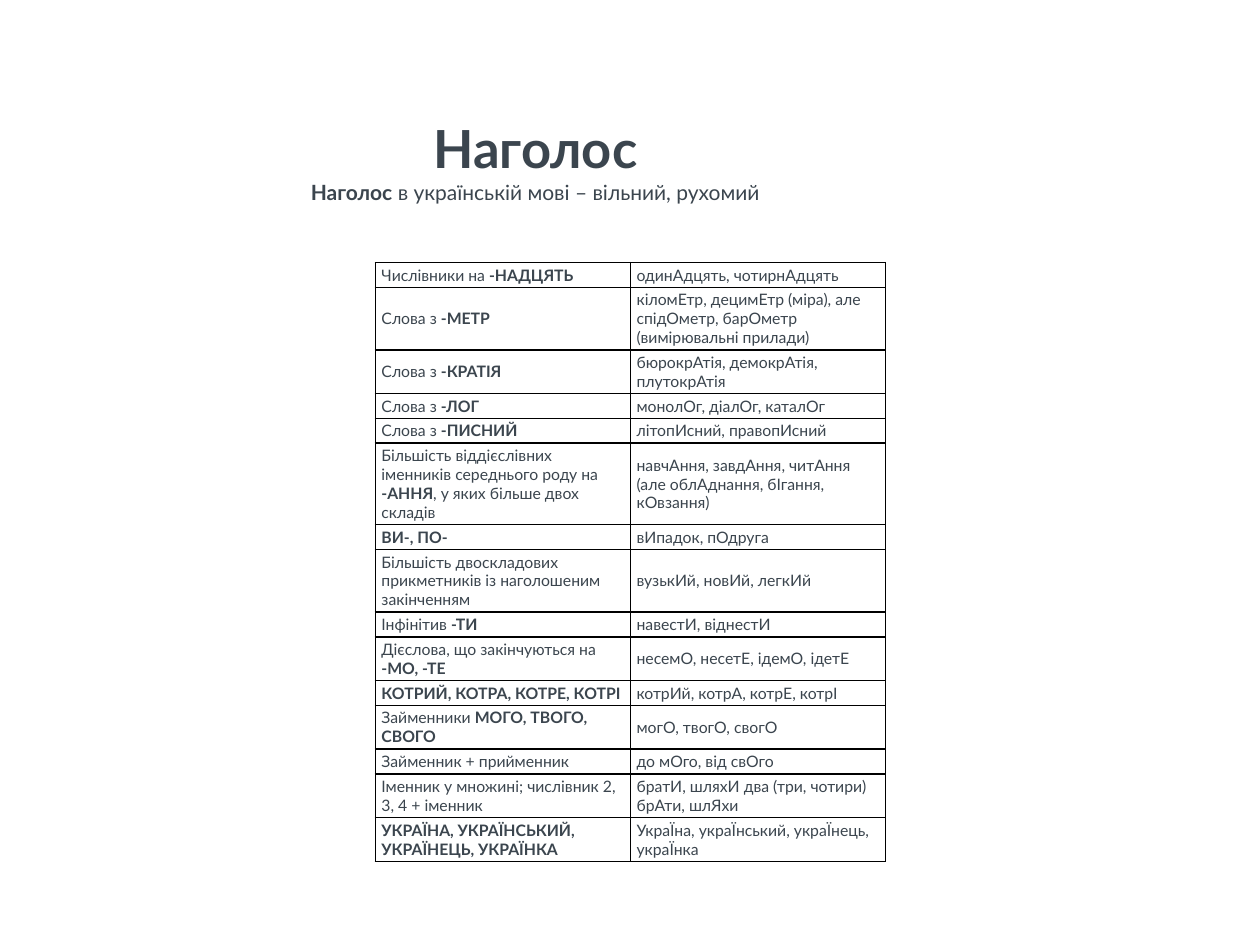
from lxml import etree
from pptx import Presentation
from pptx.dml.color import RGBColor
from pptx.enum.shapes import MSO_SHAPE
from pptx.enum.text import MSO_ANCHOR, PP_ALIGN
from pptx.oxml.ns import qn
from pptx.util import Pt

RECTANGLE = MSO_SHAPE.RECTANGLE
TOP, MIDDLE = MSO_ANCHOR.TOP, MSO_ANCHOR.MIDDLE
CENTER = PP_ALIGN.CENTER

INK = RGBColor(0x3B, 0x45, 0x4E)
WHITE = RGBColor(0xFF, 0xFF, 0xFF)
BLACK = RGBColor(0x00, 0x00, 0x00)
FONT = "Lato"
LINE_HEIGHT = 10.8
SIDE_INSET, EDGE_INSET = 3.5, 1.7

RULES = [
    ("Числівники на *-НАДЦЯТЬ*", "одинАдцять, чотирнАдцять", 1),
    ("Слова з *-МЕТР*",
     "кіломЕтр, децимЕтр (міра), але спідОметр, барОметр (вимірювальні прилади)", 3),
    ("Слова з *-КРАТІЯ*", "бюрокрАтія, демокрАтія, плутокрАтія", 2),
    ("Слова з *-ЛОГ*", "монолОг, діалОг, каталОг", 1),
    ("Слова з *-ПИСНИЙ*", "літопИсний, правопИсний", 1),
    ("Більшість віддієслівних іменників середнього роду на *-АННЯ*, у яких більше двох складів",
     "навчАння, завдАння, читАння (але облАднання, бІгання, кОвзання)", 4),
    ("*ВИ-, ПО-*", "вИпадок, пОдруга", 1),
    ("Більшість двоскладових прикметників із наголошеним закінченням",
     "вузькИй, новИй, легкИй", 3),
    ("Інфінітив *-ТИ*", "навестИ, віднестИ", 1),
    ("Дієслова, що закінчуються на *-МО, -ТЕ*", "несемО, несетЕ, ідемО, ідетЕ", 2),
    ("*КОТРИЙ, КОТРА, КОТРЕ, КОТРІ*", "котрИй, котрА, котрЕ, котрІ", 1),
    ("Займенники *МОГО, ТВОГО, СВОГО*", "могО, твогО, свогО", 2),
    ("Займенник + прийменник", "до мОго, від свОго", 1),
    ("Іменник у множині; числівник 2, 3, 4 + іменник",
     "братИ, шляхИ два (три, чотири) брАти, шлЯхи", 2),
    ("*УКРАЇНА, УКРАЇНСЬКИЙ, УКРАЇНЕЦЬ, УКРАЇНКА*",
     "УкраЇна, украЇнський, украЇнець, украЇнка", 2),
]


def write(paragraph, text, size):
    """Fill a paragraph, setting the parts between asterisks in bold."""
    paragraph.font.name = FONT
    paragraph.font.size = Pt(size)
    paragraph.font.color.rgb = INK
    for index, part in enumerate(text.split("*")):
        if part:
            run = paragraph.add_run()
            run.text = part
            run.font.bold = index % 2 == 1


def add_borders(cell):
    """Draw a thin black line on every side of a cell."""
    properties = cell._tc.get_or_add_tcPr()
    for side in ("a:lnL", "a:lnR", "a:lnT", "a:lnB"):
        line = etree.SubElement(properties, qn(side), w=str(Pt(1)))
        fill = etree.SubElement(line, qn("a:solidFill"))
        etree.SubElement(fill, qn("a:srgbClr"), val=str(BLACK))


def add_heading(slide, left, top, width, height):
    """Place the title and its definition in the given box."""
    heading = slide.shapes.add_shape(RECTANGLE, Pt(left), Pt(top), Pt(width), Pt(height))
    heading.shadow.inherit = False
    heading.fill.solid()
    heading.fill.fore_color.rgb = WHITE
    heading.line.fill.background()
    frame = heading.text_frame
    frame.word_wrap = True
    frame.vertical_anchor = TOP
    frame.margin_left = frame.margin_right = frame.margin_top = frame.margin_bottom = 0
    title, definition = frame.paragraphs[0], frame.add_paragraph()
    title.alignment = definition.alignment = CENTER
    write(title, "*Наголос*", 30)
    write(definition, "*Наголос* в українській мові – вільний, рухомий", 12)


def add_rules_table(slide, left, top, width):
    """Place the stress rules beside their examples, from the given corner down."""
    heights = [lines * LINE_HEIGHT + 2 * EDGE_INSET for _, _, lines in RULES]
    table = slide.shapes.add_table(
        len(RULES), 2, Pt(left), Pt(top), Pt(width), Pt(sum(heights))).table
    table.first_row = table.horz_banding = False
    for row, height, (rule, examples, _) in zip(table.rows, heights, RULES):
        row.height = Pt(height)
        for cell, text in zip(row.cells, (rule, examples)):
            add_borders(cell)
            cell.fill.background()
            cell.vertical_anchor = MIDDLE
            cell.margin_left = cell.margin_right = Pt(SIDE_INSET)
            cell.margin_top = cell.margin_bottom = Pt(EDGE_INSET)
            write(cell.text_frame.paragraphs[0], text, 9)


def main():
    """Build the slide and save it."""
    presentation = Presentation()
    presentation.slide_width, presentation.slide_height = Pt(720), Pt(540)
    slide = presentation.slides.add_slide(presentation.slide_layouts[6])
    add_rules_table(slide, 214.5, 150, 291.6)
    add_heading(slide, 116, 66.5, 380, 72.5)
    presentation.save("out.pptx")


if __name__ == "__main__":
    main()
